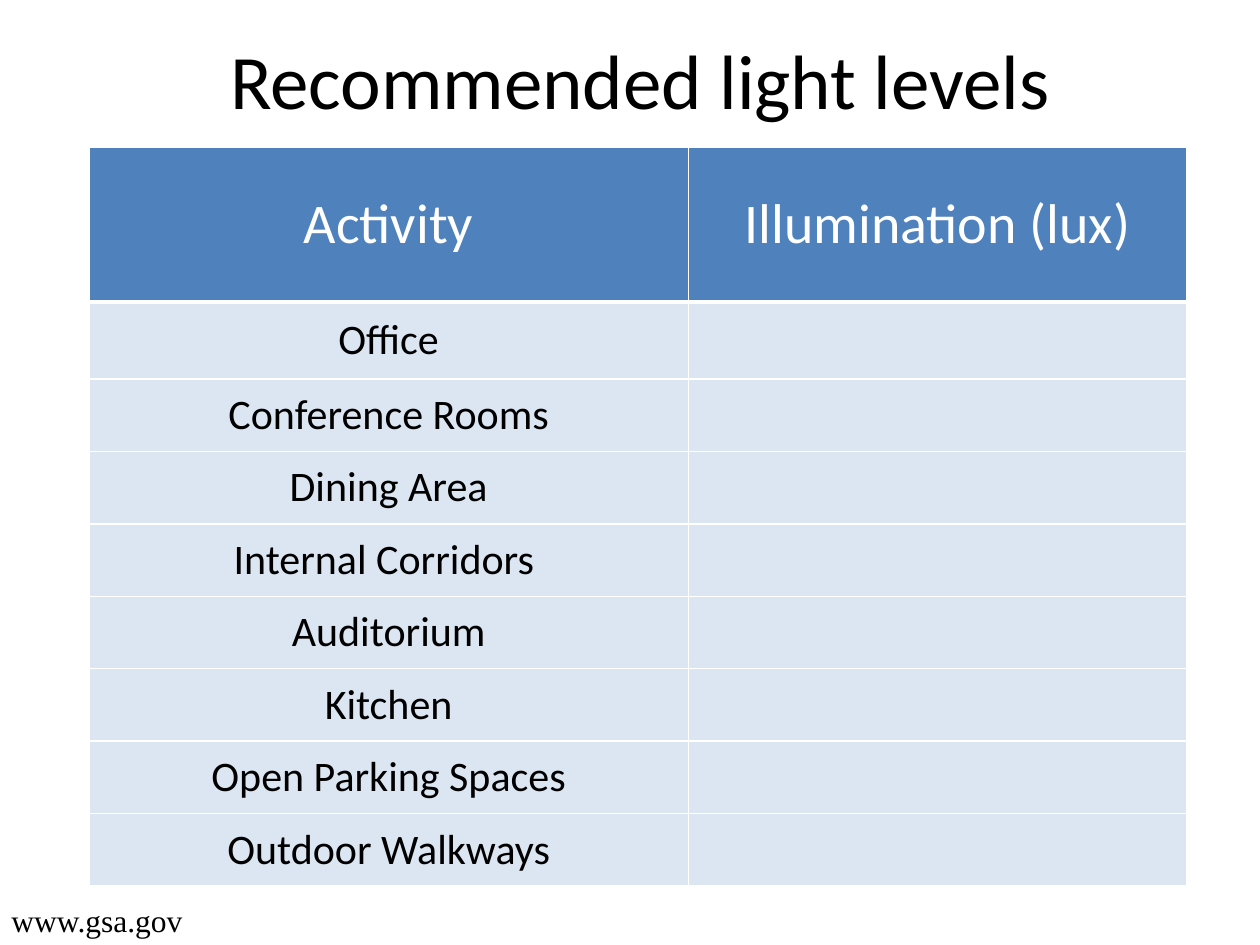
from dataclasses import dataclass

from lxml import etree
from pptx import Presentation
from pptx.dml.color import RGBColor
from pptx.enum.text import MSO_ANCHOR, MSO_AUTO_SIZE, PP_ALIGN
from pptx.oxml.ns import qn
from pptx.util import Cm, Pt

MIDDLE = MSO_ANCHOR.MIDDLE
CENTER = PP_ALIGN.CENTER
LEFT = PP_ALIGN.LEFT
GROW = MSO_AUTO_SIZE.SHAPE_TO_FIT_TEXT


@dataclass(frozen=True)
class Theme:
    font: str = "Calibri"
    source_font: str = "Times New Roman"
    ink: str = "000000"
    white: str = "FFFFFF"
    header_fill: str = "4F81BD"
    body_fill: str = "DCE6F2"
    title_size: int = 44
    header_size: int = 32
    body_size: int = 24
    source_size: int = 18
    rule: int = 1
    header_rule: int = 3


theme = Theme()


def write(frame, text, font, size, color, align):
    frame.text = text
    paragraph = frame.paragraphs[0]
    paragraph.alignment = align
    for run in paragraph.runs:
        run.font.name = font
        run.font.size = Pt(size)
        run.font.color.rgb = RGBColor.from_string(color)


def add_border(cell, side, width):
    properties = cell._tc.get_or_add_tcPr()
    line = etree.SubElement(properties, qn(f"a:{side}"), w=str(Pt(width)))
    fill = etree.SubElement(line, qn("a:solidFill"))
    etree.SubElement(fill, qn("a:srgbClr"), val=theme.white)


presentation = Presentation()
presentation.slide_width = Cm(25.4)
presentation.slide_height = Cm(19.05)
slide = presentation.slides.add_slide(presentation.slide_layouts[5])

title = slide.shapes.title
title.left, title.top, title.width, title.height = Cm(1.48), Cm(0), Cm(22.86), Cm(3.18)
title.text_frame.vertical_anchor = MIDDLE
write(title.text_frame, "Recommended light levels", theme.font, theme.title_size, theme.ink, CENTER)

headings = ["Activity", "Illumination (lux)"]
activities = [
    "Office",
    "Conference Rooms",
    "Dining Area",
    "Internal Corridors ",
    "Auditorium",
    "Kitchen",
    "Open Parking Spaces",
    "Outdoor Walkways",
]
rows = [headings] + [[activity, ""] for activity in activities]
column_widths = [Cm(12.09), Cm(10.04)]
row_heights = [Cm(3.12), Cm(1.55)] + [Cm(1.46)] * (len(activities) - 1)

light_levels = slide.shapes.add_table(
    len(rows), len(headings), Cm(1.79), Cm(2.97), sum(column_widths), sum(row_heights)
).table
for column, width in zip(light_levels.columns, column_widths):
    column.width = width
for row, height in zip(light_levels.rows, row_heights):
    row.height = height

for row_index, values in enumerate(rows):
    is_header = row_index == 0
    size = theme.header_size if is_header else theme.body_size
    color = theme.white if is_header else theme.ink
    cell_fill = theme.header_fill if is_header else theme.body_fill
    top_rule = theme.header_rule if row_index == 1 else theme.rule
    bottom_rule = theme.header_rule if is_header else theme.rule
    for column_index, value in enumerate(values):
        cell = light_levels.cell(row_index, column_index)
        cell.vertical_anchor = MIDDLE
        cell.margin_left = cell.margin_right = Cm(0.18)
        cell.margin_top = cell.margin_bottom = Cm(0)
        for side, width in (
            ("lnL", theme.rule),
            ("lnR", theme.rule),
            ("lnT", top_rule),
            ("lnB", bottom_rule),
        ):
            add_border(cell, side, width)
        cell.fill.solid()
        cell.fill.fore_color.rgb = RGBColor.from_string(cell_fill)
        if value:
            write(cell.text_frame, value, theme.font, size, color, CENTER)

source = slide.shapes.add_textbox(Cm(-0.02), Cm(18.03), Cm(3.99), Cm(1.02)).text_frame
source.word_wrap = False
source.auto_size = GROW
source.vertical_anchor = MIDDLE
write(source, "www.gsa.gov", theme.source_font, theme.source_size, theme.ink, LEFT)

presentation.save("out.pptx")
